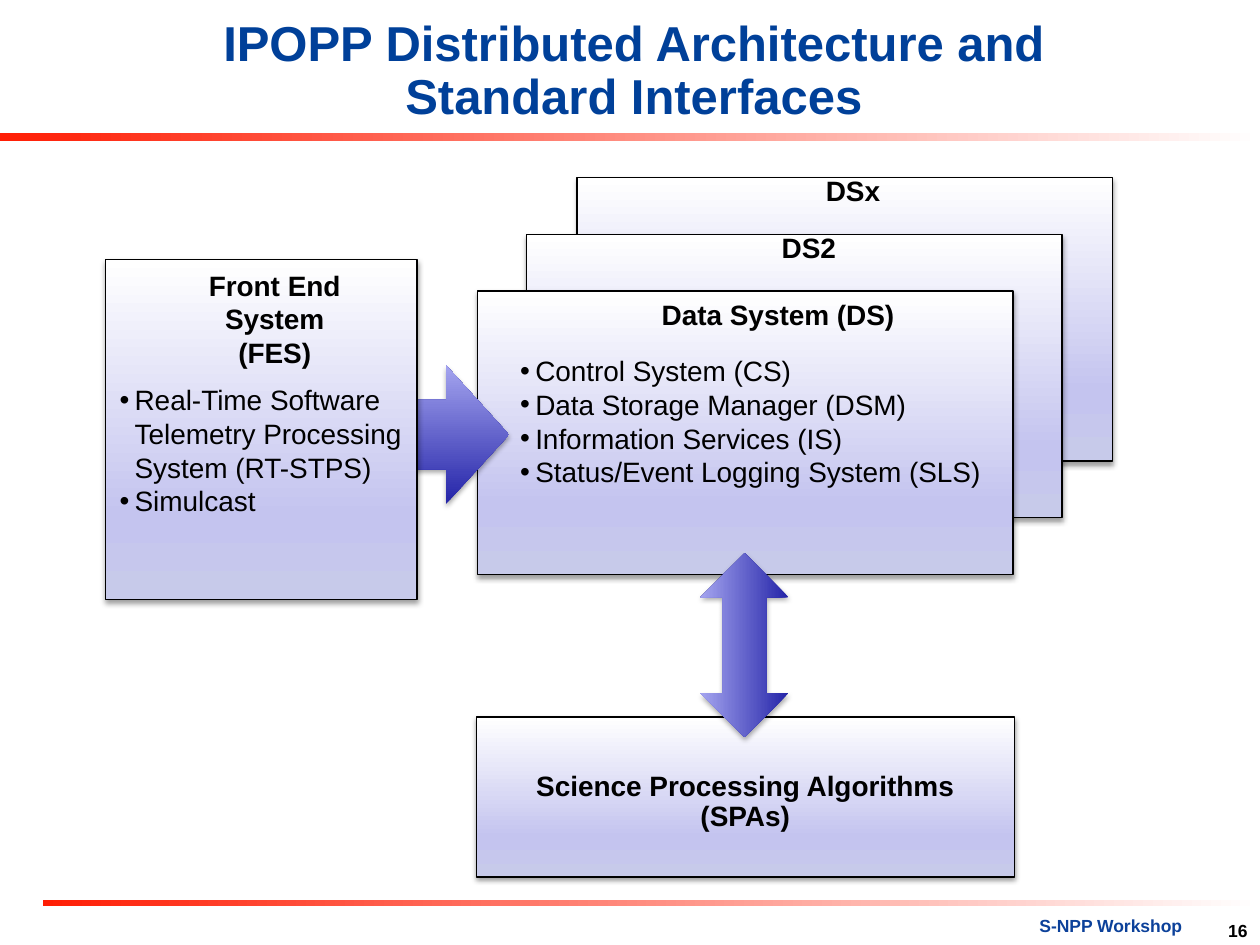
from dataclasses import dataclass

from lxml import etree
from pptx import Presentation
from pptx.dml.color import RGBColor
from pptx.enum.shapes import MSO_SHAPE as Shape
from pptx.enum.text import MSO_ANCHOR as Anchor, PP_ALIGN as Align
from pptx.oxml import parse_xml
from pptx.oxml.ns import nsdecls, qn
from pptx.util import Inches, Pt


@dataclass(frozen=True)
class Theme:
    font: str = "Arial"
    title_size: int = 28
    body_size: int = 16
    footer_size: int = 10
    title: str = "004099"
    footer: str = "0C419A"
    text: str = "000000"
    line: str = "000000"
    bar: tuple = ((0, "FF1E05"), (100, "FFFFFF"))
    box: tuple = ((0, "C7CAEA"), (25, "C4C4EF"), (100, "FFFFFF"))
    arrow: tuple = ((0, "2424A8"), (100, "A4A4EF"))


theme = Theme()
presentation = Presentation()
presentation.slide_width, presentation.slide_height = Inches(10), Inches(7.5)
slide = presentation.slides.add_slide(presentation.slide_layouts[6])


def add_gradient_shape(kind, place, stops, angle, line=False, shadow=0):
    """Angle is clockwise in degrees; shadow is its opacity in percent."""
    shape = slide.shapes.add_shape(kind, *map(Inches, place))
    shape.shadow.inherit = False
    if line:
        shape.line.color.rgb = RGBColor.from_string(theme.line)
        shape.line.width = Pt(0.75)
    else:
        shape.line.fill.background()
    properties = shape._element.spPr
    stop_xml = "".join(
        f'<a:gs pos="{position * 1000}"><a:srgbClr val="{color}"/></a:gs>'
        for position, color in stops)
    properties.find(qn("a:prstGeom")).addnext(parse_xml(
        f'<a:gradFill {nsdecls("a")} rotWithShape="1"><a:gsLst>{stop_xml}</a:gsLst>'
        f'<a:lin ang="{angle * 60000}" scaled="0"/></a:gradFill>'))
    if shadow:
        properties.find(qn("a:effectLst")).append(parse_xml(
            f'<a:outerShdw {nsdecls("a")} blurRad="{Pt(3.1)}" dist="{Pt(1.7)}" '
            'dir="5400000" rotWithShape="0"><a:srgbClr val="000000">'
            f'<a:alpha val="{shadow * 1000}"/></a:srgbClr></a:outerShdw>'))
    return shape


def add_text(place, lines, size=theme.body_size, color=theme.text, bold=True,
             align=Align.CENTER, spacing=None, anchor=Anchor.TOP, bullets=False):
    frame = slide.shapes.add_textbox(*map(Inches, place)).text_frame
    frame.word_wrap = True
    frame.vertical_anchor = anchor
    frame.text = "\n".join(lines)
    for paragraph in frame.paragraphs:
        paragraph.alignment = align
        if spacing:
            paragraph.line_spacing = spacing
        if bullets:
            properties = paragraph._p.get_or_add_pPr()
            properties.set("marL", str(Inches(0.12)))
            properties.set("indent", str(Inches(-0.12)))
            etree.SubElement(properties, qn("a:buFont")).set("typeface", theme.font)
            etree.SubElement(properties, qn("a:buChar")).set("char", "•")
        for run in paragraph.runs:
            run.font.name = theme.font
            run.font.size = Pt(size)
            run.font.bold = bold
            run.font.color.rgb = RGBColor.from_string(color)


# Title and footer
for bar in ((0, 1.06, 10, 0.06), (0.34, 7.14, 9.66, 0.05)):
    add_gradient_shape(Shape.RECTANGLE, bar, theme.bar, 0)
add_text((1.24, 0.16, 7.58, 0.83),
         ["IPOPP Distributed Architecture and Standard Interfaces"],
         theme.title_size, theme.title, spacing=0.9, anchor=Anchor.MIDDLE)
add_text((4.75, 7.21, 4.73, 0.27), ["S-NPP Workshop"],
         theme.footer_size, theme.footer, align=Align.RIGHT)
add_text((9.5, 7.25, 0.5, 0.25), ["16"], theme.footer_size, align=Align.RIGHT)

# Stacked data systems, science algorithms and front end
data_systems = [(left, 1.41 + 0.45 * index, 4.25, 2.25)
                for index, left in enumerate((4.58, 4.18, 3.79))]
algorithms = (3.78, 5.69, 4.27, 1.27)
front_end = (0.84, 2.06, 2.47, 2.7)
for box in (*data_systems, algorithms):
    add_gradient_shape(Shape.RECTANGLE, box, theme.box, 270, line=True, shadow=38)
add_gradient_shape(Shape.RIGHT_ARROW, (3.04, 2.9, 1, 1.1), theme.arrow, 270, shadow=35)
add_gradient_shape(Shape.RECTANGLE, front_end, theme.box, 270, line=True, shadow=38)
exchange_arrow = add_gradient_shape(
    Shape.LEFT_RIGHT_ARROW, (5.18, 4.77, 1.46, 0.7), theme.arrow, 270, shadow=35)
exchange_arrow.rotation = 270

# Headings
for place, lines in (
    ((1.22, 2.08, 1.92, 0.91), ["Front End System", "(FES)"]),
    ((5.81, 1.33, 1.92, 0.37), ["DSx"]),
    ((5.46, 1.78, 1.92, 0.37), ["DS2"]),
    ((4.95, 2.31, 2.45, 0.37), ["Data System (DS)"]),
):
    add_text(place, lines)
add_text((3.8, 6.08, 4.23, 0.59), ["Science Processing Algorithms (SPAs)"], spacing=0.9)

# Components
for place, lines in (
    ((0.85, 2.99, 2.45, 1.18),
     ["Real-Time Software Telemetry Processing System (RT-STPS)", "Simulcast"]),
    ((4.03, 2.76, 3.97, 1.18),
     ["Control System (CS)", "Data Storage Manager (DSM)",
      "Information Services (IS)", "Status/Event Logging System (SLS)"]),
):
    add_text(place, lines, bold=False, align=Align.LEFT, bullets=True)

presentation.save("out.pptx")
